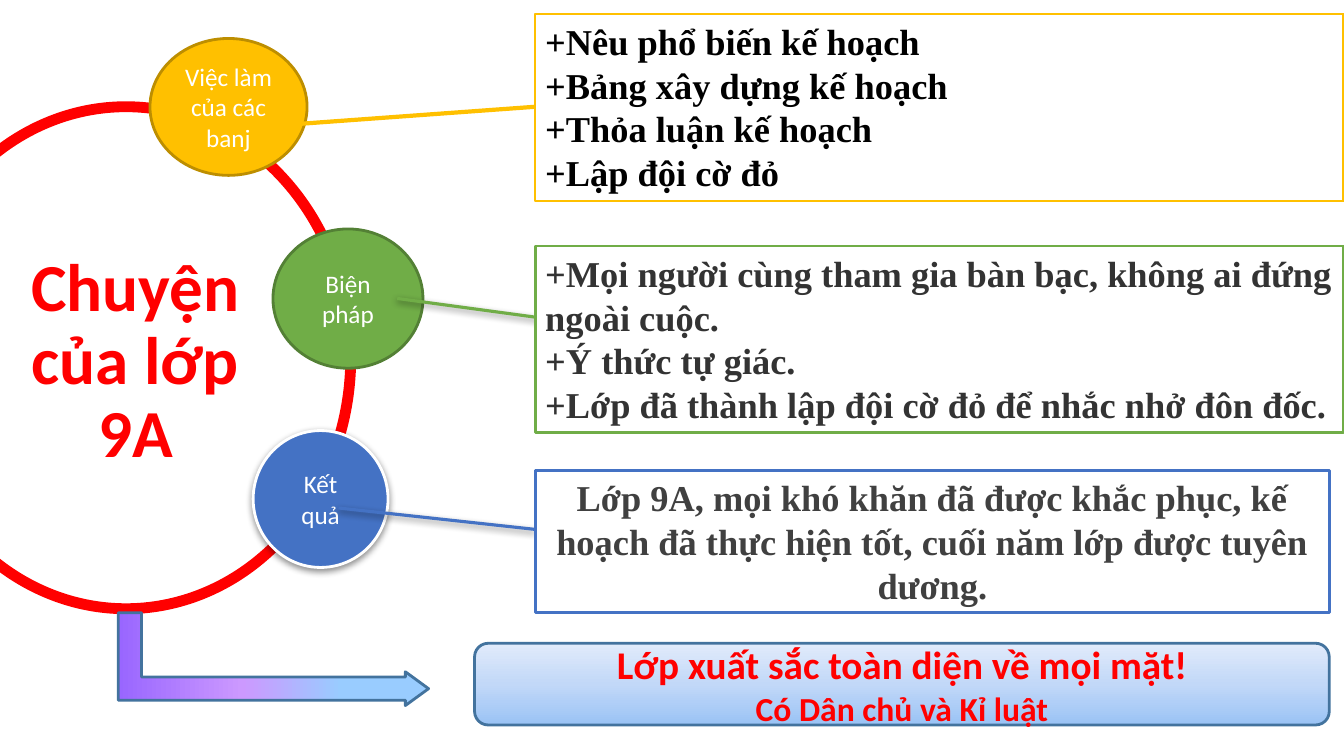
from lxml import etree
from pptx import Presentation
from pptx.dml.color import RGBColor
from pptx.enum.shapes import MSO_CONNECTOR, MSO_SHAPE
from pptx.enum.text import MSO_ANCHOR, PP_ALIGN
from pptx.oxml import parse_xml
from pptx.oxml.ns import nsdecls, qn
from pptx.util import Cm, Pt

OVAL, RECT = MSO_SHAPE.OVAL, MSO_SHAPE.RECTANGLE
ROUNDED, BENT_ARROW = MSO_SHAPE.ROUNDED_RECTANGLE, MSO_SHAPE.BENT_UP_ARROW
STRAIGHT = MSO_CONNECTOR.STRAIGHT
TOP, MIDDLE, BOTTOM = MSO_ANCHOR.TOP, MSO_ANCHOR.MIDDLE, MSO_ANCHOR.BOTTOM
LEFT, CENTER = PP_ALIGN.LEFT, PP_ALIGN.CENTER

COLORS = {
    "red": "FF0000", "white": "FFFFFF", "black": "000000",
    "gold": "FFC000", "gold_edge": "BD8E00",
    "green": "70AD47", "green_edge": "538035",
    "blue": "4472C4", "steel": "43739E",
    "dark": "333333", "grey": "404040",
    "sky": "99CCFF", "lilac": "CC99FF", "violet": "9966FF",
    "banner_low": "9AC3F5", "banner_mid": "C2D8F8", "banner_high": "E1EBFB",
}
BOX_LEFT = 13.49


def rgb(name):
    return RGBColor.from_string(COLORS[name])


def set_line(sp, color, width):
    sp.line.color.rgb = rgb(color)
    sp.line.width = Pt(width)


def set_effects(sp, shadow):
    """Give the shape a soft drop shadow, or an empty effect list."""
    spPr = sp._element.spPr
    for old in spPr.findall(qn("a:effectLst")):
        spPr.remove(old)
    effects = etree.SubElement(spPr, qn("a:effectLst"))
    if shadow:
        effects.append(parse_xml(
            f'<a:outerShdw {nsdecls("a")} blurRad="{Pt(5)}" dist="{Pt(2)}" '
            f'dir="5400000" algn="ctr" rotWithShape="0">'
            f'<a:srgbClr val="{COLORS["black"]}"><a:alpha val="43000"/></a:srgbClr>'
            f'</a:outerShdw>'))


def set_gradient(sp, stops, angle):
    """Fill with (percent, colour) stops; the angle runs clockwise in degrees."""
    marks = "".join(f'<a:gs pos="{pos * 1000}"><a:srgbClr val="{COLORS[c]}"/></a:gs>'
                    for pos, c in stops)
    sp._element.spPr.find(qn("a:prstGeom")).addnext(parse_xml(
        f'<a:gradFill {nsdecls("a")} rotWithShape="1"><a:gsLst>{marks}</a:gsLst>'
        f'<a:lin ang="{angle * 60000}" scaled="1"/></a:gradFill>'))


def set_text(sp, text, sizes, color, font="Calibri", bold=False,
             align=CENTER, anchor=MIDDLE):
    """Write the text, with one size for each paragraph."""
    tf = sp.text_frame
    tf.word_wrap = True
    tf.vertical_anchor = anchor
    tf.text = text
    for p, size in zip(tf.paragraphs, sizes):
        p.alignment = align
        for r in p.runs:
            r.font.name = font
            r.font.size = Pt(size)
            r.font.bold = bold
            r.font.color.rgb = rgb(color)


def add_shape(s, kind, place, line, width, fill=None, shadow=False):
    sp = s.shapes.add_shape(kind, *map(Cm, place))
    set_line(sp, line, width)
    if fill:
        sp.fill.solid()
        sp.fill.fore_color.rgb = rgb(fill)
    set_effects(sp, shadow)
    return sp


def add_title(s):
    sp = s.shapes.add_textbox(Cm(0), Cm(5.38), Cm(6.83), Cm(6.63))
    set_text(sp, "Chuyện của lớp 9A", [48], "red", bold=True, anchor=BOTTOM)
    sp.text_frame.paragraphs[0].line_spacing = 0.9


def add_ring(s):
    sp = add_shape(s, OVAL, (-2.49, 2.69, 11.33, 12.65), "red", 7.75)
    sp.fill.background()


def add_topic(s, text, place, fill, edge, shadow=False):
    sp = add_shape(s, OVAL, place, edge, 2, fill, shadow)
    set_text(sp, text, [18], "white")


def add_link(s, ends, color, width, shadow=False):
    cx = s.shapes.add_connector(STRAIGHT, *map(Cm, ends))
    set_line(cx, color, width)
    set_effects(cx, shadow)


def add_detail(s, text, top, width, height, line, line_width, color, align=LEFT):
    sp = add_shape(s, RECT, (BOX_LEFT, top, width, height), line, line_width, "white")
    set_text(sp, text, [26], color, "Times New Roman", True, align, TOP)


def add_result_arrow(s):
    sp = add_shape(s, BENT_ARROW, (5.72, 12.7, 2.34, 7.82), "steel", 2)
    sp.rotation = 90
    for i, value in enumerate((0.25, 0.182, 0.25)):
        sp.adjustments[i] = value
    set_gradient(sp, [(28, "sky"), (60, "lilac"), (100, "violet")], 90)


def add_banner(s):
    sp = add_shape(s, ROUNDED, (11.96, 16.21, 21.54, 2.06), "steel", 2)
    set_gradient(sp, [(0, "banner_low"), (50, "banner_mid"), (100, "banner_high")], 270)
    set_text(sp, "Lớp xuất sắc toàn diện về mọi mặt!\nCó Dân chủ và Kỉ luật",
             [28, 24], "red", bold=True)


def main():
    prs = Presentation()
    prs.slide_width, prs.slide_height = Cm(33.87), Cm(19.05)
    s = prs.slides.add_slide(prs.slide_layouts[6])

    add_title(s)
    add_ring(s)
    add_topic(s, "Việc làm của các banj", (3.78, 0.97, 3.96, 3.45), "gold", "gold_edge")
    add_topic(s, "Biện pháp", (6.88, 5.77, 3.78, 3.51), "green", "green_edge")
    add_topic(s, "Kết quả", (6.38, 10.85, 3.4, 3.45), "blue", "white", shadow=True)

    add_link(s, (5.77, 3.25, BOX_LEFT, 2.69), "gold", 3)
    add_detail(s, "+Nêu phổ biến kế hoạch\v+Bảng xây dựng kế hoạch\v"
               "+Thỏa luận kế hoạch\v+Lập đội cờ đỏ",
               0.36, 20.37, 4.7, "gold", 1.5, "black")
    add_link(s, (10.01, 7.52, 13.92, 8.05), "green", 2.25, shadow=True)
    add_detail(s, "+Mọi người cùng tham gia bàn bạc, không ai đứng ngoài cuộc.\v"
               "+Ý thức tự giác.\v+Lớp đã thành lập đội cờ đỏ để nhắc nhở đôn đốc.",
               6.2, 20.37, 4.7, "green", 2, "dark")
    add_link(s, (8.53, 12.8, BOX_LEFT, 13.34), "blue", 2.25, shadow=True)
    add_detail(s, "Lớp 9A, mọi khó khăn đã được khắc phục, kế hoạch đã thực hiện tốt, "
               "cuối năm lớp được tuyên dương.",
               11.86, 20.02, 3.58, "blue", 2, "grey", CENTER)

    add_result_arrow(s)
    add_banner(s)
    prs.save("out.pptx")


if __name__ == "__main__":
    main()
